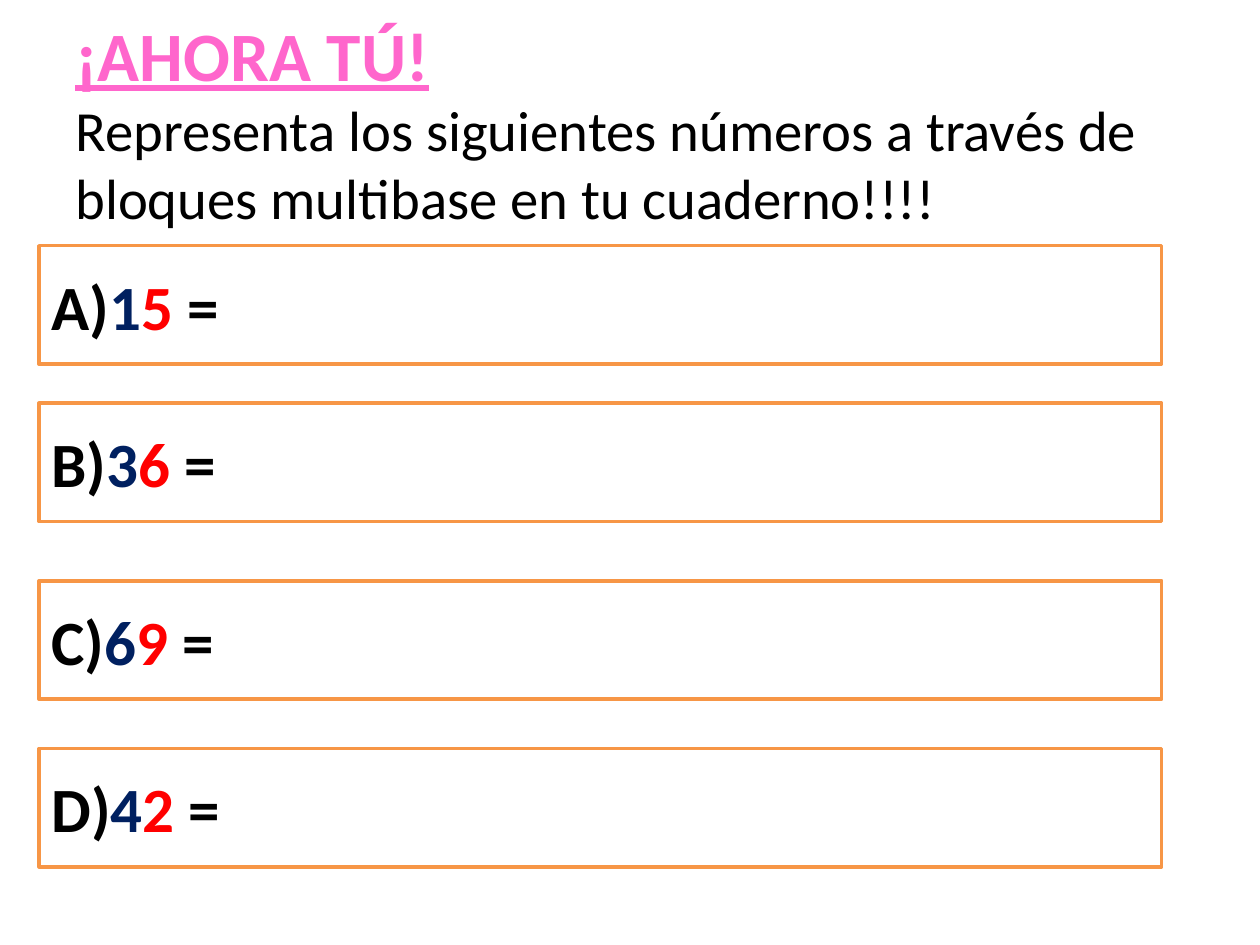
from dataclasses import dataclass

from pptx import Presentation
from pptx.dml.color import RGBColor as RGB
from pptx.enum.shapes import MSO_SHAPE as Shape
from pptx.enum.text import MSO_ANCHOR as Anchor, PP_ALIGN as Align
from pptx.util import Inches, Pt


@dataclass(frozen=True)
class Theme:
    """Colours, font and type sizes of the slide."""
    font: str = "Calibri"
    ink: str = "000000"
    pink: str = "FF66CC"
    tens: str = "002060"
    ones: str = "FF0000"
    paper: str = "FFFFFF"
    edge: str = "F79646"
    head: float = 39.6
    body: float = 32.4
    task: float = 36


THEME = Theme()


def add_text(para, text, size, color=THEME.ink, bold=False, under=False):
    """Add one formatted run to a paragraph."""
    run = para.add_run()
    run.text = text
    font = run.font
    font.name, font.size = THEME.font, Pt(size)
    font.bold, font.underline = bold, under
    font.color.rgb = RGB.from_string(color)


def set_frame(shape):
    """Wrap and centre the text of a shape vertically and return its frame."""
    frame = shape.text_frame
    frame.word_wrap = True
    frame.vertical_anchor = Anchor.MIDDLE
    frame.paragraphs[0].alignment = Align.LEFT
    return frame


def add_title(slide, left, top, width, height):
    """Place the heading and the instruction below it."""
    box = slide.shapes.add_textbox(*map(Inches, (left, top, width, height)))
    frame = set_frame(box)
    add_text(frame.paragraphs[0], "¡AHORA TÚ!", THEME.head,
             color=THEME.pink, bold=True, under=True)
    add_text(frame.add_paragraph(),
             "Representa los siguientes números a través de "
             "bloques multibase en tu cuaderno!!!!", THEME.body)


def add_task(slide, letter, number, left, top, width, height):
    """Place a framed exercise with its tens and ones in colour."""
    box = slide.shapes.add_shape(
        Shape.RECTANGLE, *map(Inches, (left, top, width, height)))
    box.shadow.inherit = False
    box.fill.solid()
    box.fill.fore_color.rgb = RGB.from_string(THEME.paper)
    box.line.color.rgb = RGB.from_string(THEME.edge)
    box.line.width = Pt(2)
    para = set_frame(box).paragraphs[0]
    tens, ones = number
    parts = ((f"{letter})", THEME.ink), (tens, THEME.tens),
             (ones, THEME.ones), (" =", THEME.ink))
    for text, color in parts:
        add_text(para, text, THEME.task, color=color, bold=True)


def main():
    """Build and save the slide."""
    deck = Presentation()
    deck.slide_width, deck.slide_height = Inches(10), Inches(7.5)
    slide = deck.slides.add_slide(deck.slide_layouts[6])
    add_title(slide, 0.5, 0.34, 9, 1.25)
    tasks = zip("ABCD", ("15", "36", "69", "42"), (1.95, 3.2, 4.61, 5.94))
    for letter, number, top in tasks:
        add_task(slide, letter, number, 0.31, top, 8.91, 0.94)
    deck.save("out.pptx")


if __name__ == "__main__":
    main()
